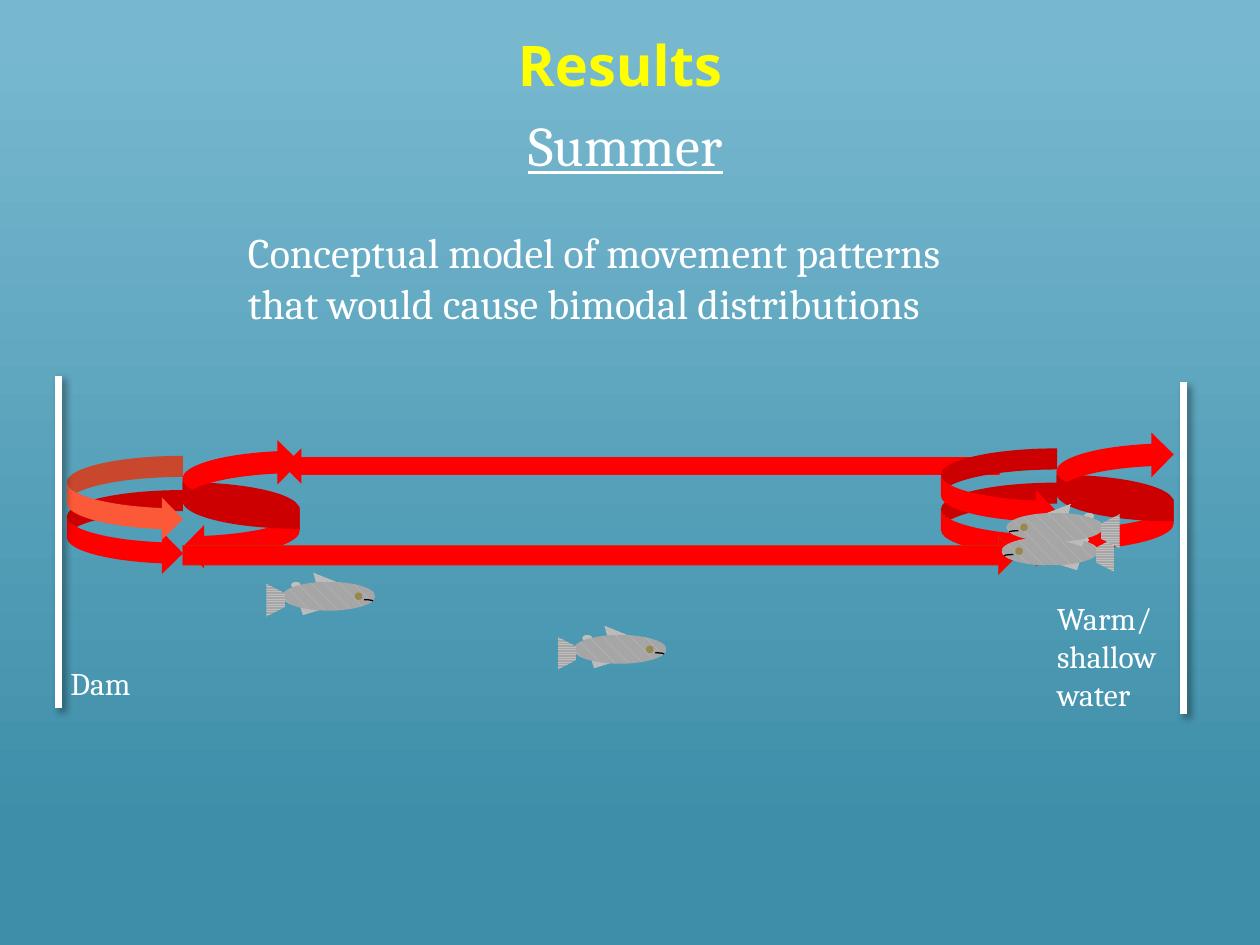
from lxml import etree
from pptx import Presentation
from pptx import util as u
from pptx.dml.color import RGBColor
from pptx.enum import dml, shapes, text
from pptx.oxml.ns import qn

Cm, Pt = u.Cm, u.Pt
G, PAT = shapes.MSO_SHAPE, dml.MSO_PATTERN
rgb = RGBColor.from_string


def add_shape(parent, kind, x, y, w, h, fill=None, line=None, rot=0):
    """Fill is a hex colour, a (pattern, fore, back) tuple or None; line is (hex, points)."""
    sp = parent.shapes.add_shape(kind, Cm(x), Cm(y), Cm(w), Cm(h))
    sp.shadow.inherit = False
    sp.rotation = rot
    if fill is None:
        sp.fill.background()
    elif isinstance(fill, tuple):
        sp.fill.patterned()
        sp.fill.pattern = fill[0]
        sp.fill.fore_color.rgb = rgb(fill[1])
        sp.fill.back_color.rgb = rgb(fill[2])
    else:
        sp.fill.solid()
        sp.fill.fore_color.rgb = rgb(fill)
    if line:
        sp.line.color.rgb = rgb(line[0])
        sp.line.width = Pt(line[1])
    else:
        sp.line.fill.background()
    return sp


def add_text(s, x, y, w, h, lines, size, font="Cambria", color="FFFFFF", wrap=True, grow=True):
    tf = s.shapes.add_textbox(Cm(x), Cm(y), Cm(w), Cm(h)).text_frame
    tf.word_wrap = wrap
    tf.auto_size = text.MSO_AUTO_SIZE.SHAPE_TO_FIT_TEXT if grow else text.MSO_AUTO_SIZE.NONE
    for i, line in enumerate(lines):
        p = tf.paragraphs[0] if i == 0 else tf.add_paragraph()
        r = p.add_run()
        r.text = line
        r.font.size, r.font.name = Pt(size), font
        r.font.color.rgb = rgb(color)
    return tf


prs = Presentation()
prs.slide_width, prs.slide_height = Cm(25.4), Cm(19.05)
s = prs.slides.add_slide(prs.slide_layouts[6])

# Background gradient, light at the top
bg = s.background.fill
bg.gradient()
bg.gradient_angle = 270
for stop, (pos, color) in zip(bg.gradient_stops, [(0.04, "77B8CF"), (0.88, "3E8EA9")]):
    stop.position = pos
    stop.color.rgb = rgb(color)

# Movement arrows: two loops at each end, joined by long arrows
RED = "FF0000"
add_shape(s, G.LEFT_ARROW, 5.72, 9.04, 14.43, 0.71, RED)
for x, y, upper in [(18.97, 9.04, RED), (1.35, 9.19, "FC5938")]:
    add_shape(s, G.CURVED_RIGHT_ARROW, x, y + 0.69, 2.34, 1.7, RED)
    add_shape(s, G.CURVED_LEFT_ARROW, x + 2.33, y + 0.53, 2.36, 1.75, RED)
    add_shape(s, G.CURVED_RIGHT_ARROW, x, y, 2.34, 1.7, upper)
    add_shape(s, G.CURVED_LEFT_ARROW, x + 2.33, y - 0.33, 2.36, 1.8, RED, rot=180)
add_shape(s, G.RIGHT_ARROW, 3.68, 10.8, 16.84, 0.79, RED, ("CC3300", 0.25))

# Title and subtitle
tf = add_text(s, 1.07, -0.2, 22.86, 2.97, ["Results"], 32, "Noto Sans", "FFFF00", grow=False)
tf.vertical_anchor = text.MSO_ANCHOR.MIDDLE
p = tf.paragraphs[0]
p.alignment = text.PP_ALIGN.CENTER
p.runs[0].font.bold = True

tf = add_text(s, 0.99, 2.11, 22.86, 3.38, ["Summer"], 32, grow=False)
p = tf.paragraphs[0]
p.alignment = text.PP_ALIGN.CENTER
p.space_before = Pt(6.4)
p.runs[0].font.underline = True
p._p.get_or_add_pPr().set("marL", str(Cm(0.38)))

# Description and end labels
add_text(s, 4.75, 4.45, 16.26, 2.31, ["Conceptual model of movement patterns",
                                      "that would cause bimodal distributions"], 24, wrap=False)
add_text(s, 1.17, 13.26, 1.9, 1.02, ["Dam"], 18, wrap=False)
add_text(s, 21.06, 11.96, 2.97, 2.57, ["Warm/", "shallow water"], 18)

# Walls at both ends, with a soft shadow
for x, top in [(1.17, 7.57), (23.85, 7.7)]:
    cn = s.shapes.add_connector(shapes.MSO_CONNECTOR.STRAIGHT, Cm(x), Cm(top), Cm(x), Cm(top + 6.7))
    cn.line.color.rgb = rgb("FFFFFF")
    cn.line.width = Pt(4)
    effects = etree.SubElement(cn._element.spPr, qn("a:effectLst"))
    shadow = etree.SubElement(effects, qn("a:outerShdw"), blurRad=str(Pt(4)), dist=str(Pt(3)),
                              dir="2700000", algn="tl", rotWithShape="0")
    black = etree.SubElement(shadow, qn("a:srgbClr"), val="000000")
    etree.SubElement(black, qn("a:alpha"), val="40000")

# Fish parts, measured from the body's top left, facing right
FIN = (PAT.LIGHT_DOWNWARD_DIAGONAL, "A6A6A6", "BFBFBF")
BODY_W = 1.88
FISH = [
    (G.RIGHT_TRIANGLE, 0.36, 0.3, 0.53, 0.3, FIN, None, 342.6),
    (G.RIGHT_TRIANGLE, 0.66, -0.25, 0.43, 0.33, FIN, None, 344.4),
    (G.OVAL, 0.18, 0, 0.2, 0.13, (PAT.PERCENT_10, "BFBFBF", "BFBFBF"), None, 0),
    (G.OVAL, 0, 0, BODY_W, 0.58, (PAT.SHINGLE, "BFBFBF", "A6A6A6"), None, 0),
    (G.OVAL, 1.5, 0.25, 0.08, 0.08, "000000", ("98894B", 2), 0),
    (G.ARC, 1.47, 0.36, 0.36, 0.05, None, ("000000", 0.75), 0),
    (G.TRAPEZOID, -0.46, 0.18, 0.66, 0.38, (PAT.NARROW_HORIZONTAL, "BFBFBF", "A6A6A6"), None, 90),
]
for x, y, scale, flip in [(5.69, 11.73, 1, False), (11.56, 12.8, 1, False),
                          (20.19, 10.82, 1.04, True), (20.29, 10.34, 1.04, True)]:
    fish = s.shapes.add_group_shape()
    for kind, dx, dy, w, h, fill, line, rot in FISH:
        if flip:
            dx, rot = BODY_W - dx - w, -rot % 360
        sp = add_shape(fish, kind, x + dx * scale, y + dy, w * scale, h, fill, line, rot)
        if kind == G.TRAPEZOID:
            sp.adjustments[0] = 0.518
        if flip:
            sp._element.spPr.xfrm.set("flipH", "1")

prs.save("out.pptx")
